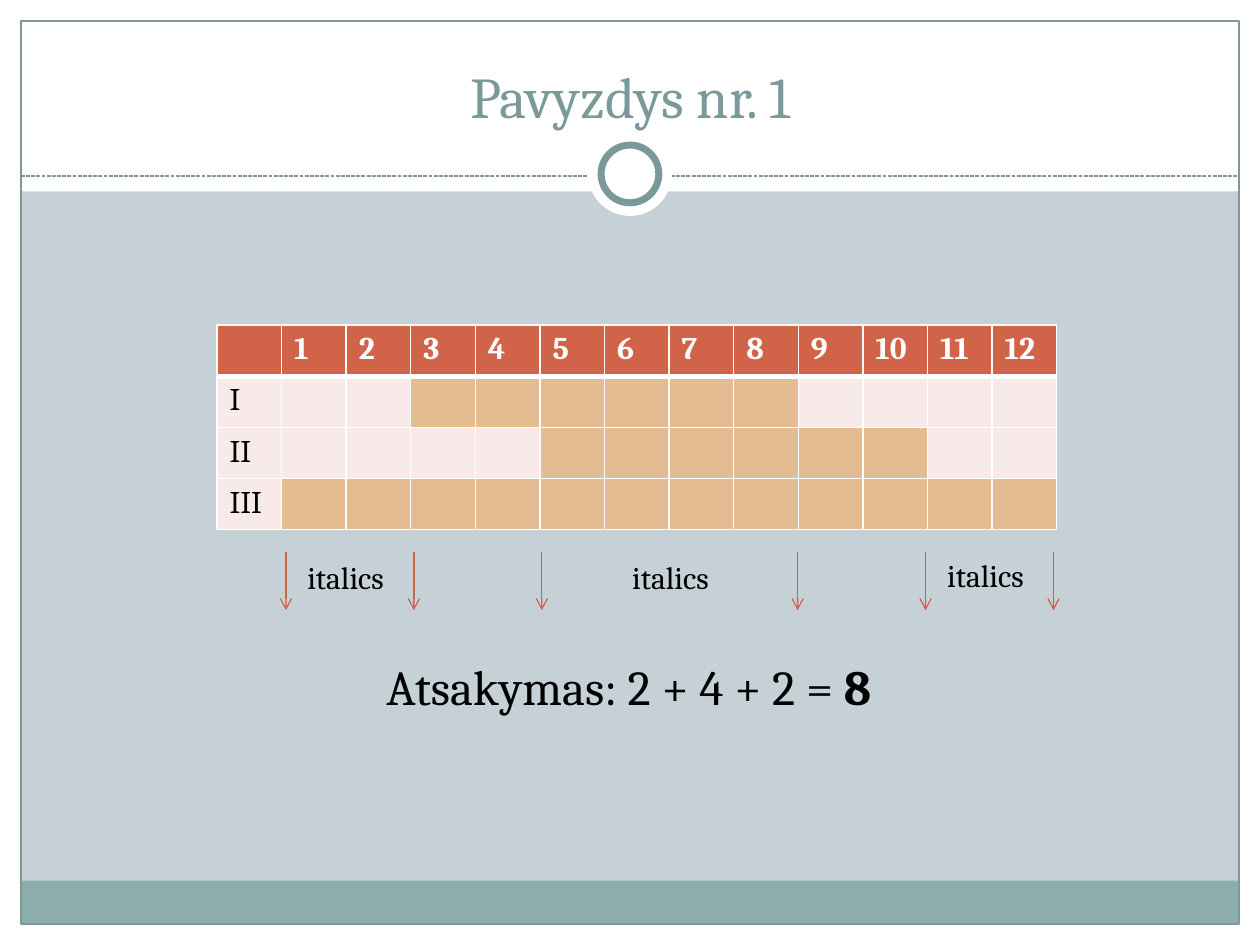
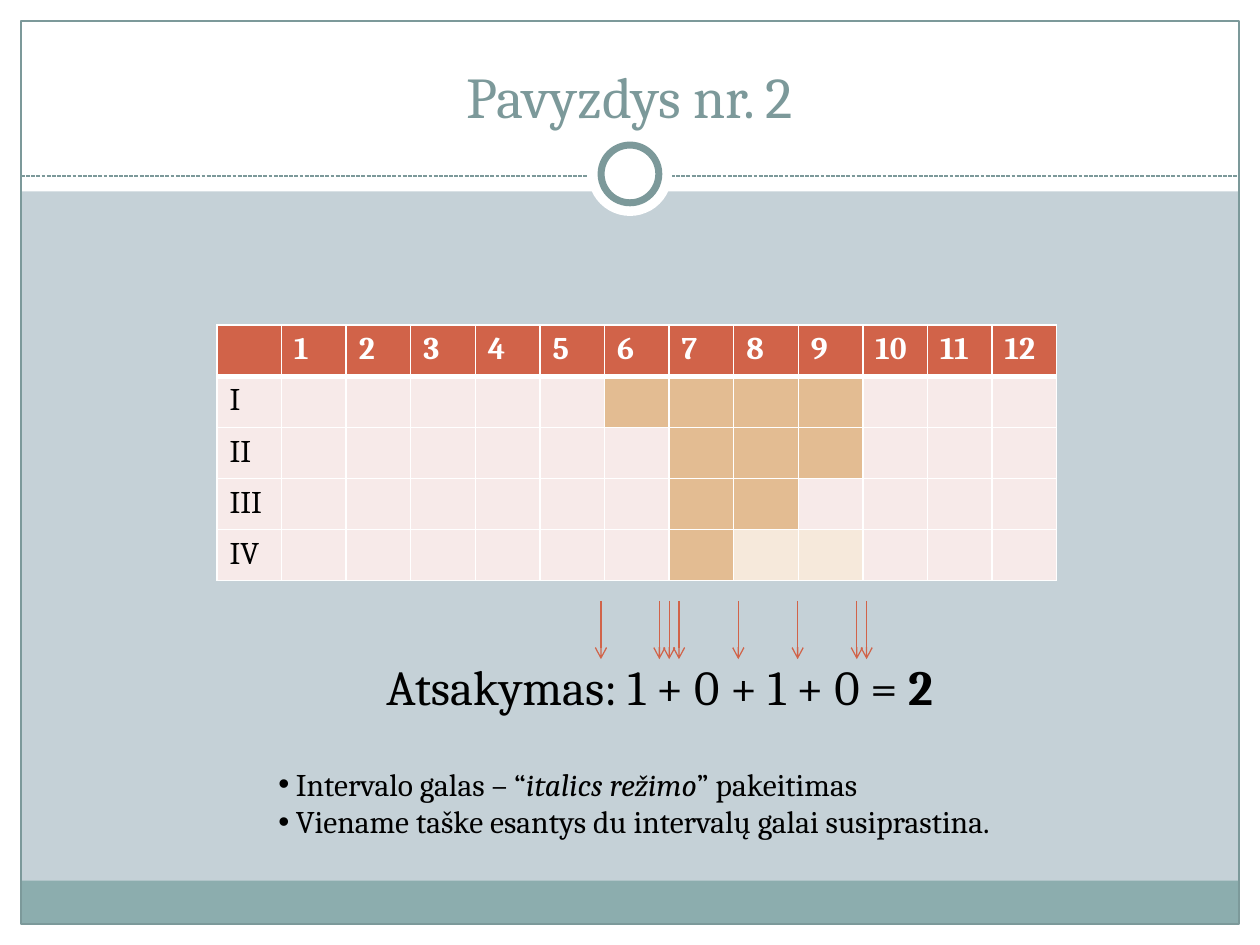
from dataclasses import dataclass

from lxml.etree import SubElement
from pptx import Presentation
from pptx.dml.color import RGBColor
from pptx.enum.dml import MSO_LINE_DASH_STYLE as Dash
from pptx.enum.shapes import MSO_CONNECTOR as Connector, MSO_SHAPE as Preset
from pptx.enum.text import MSO_ANCHOR as Anchor, MSO_AUTO_SIZE as AutoSize, PP_ALIGN as Align
from pptx.oxml.ns import qn
from pptx.util import Pt

# Content: bars are (first month, last month, colour name); text is a list of (words, style) runs
EXAMPLES = [
    {
        "title": "Pavyzdys nr. 1",
        "rows": [
            ("I", [(3, 8, "bar")]),
            ("II", [(5, 10, "bar")]),
            ("III", [(1, 12, "bar")]),
        ],
        "arrow_top": 315.4,
        "arrows": [163.4 + 36.55 * end for end in (0, 2, 4, 8, 10, 12)],
        "labels": [("italics", 168.5, 315.4), ("italics", 354.2, 315.4), ("italics", 534.2, 314.2)],
        "answer": [("Atsakymas: 2 + 4 + 2 = ", ""), ("8", "bold")],
        "notes": [],
    },
    {
        "title": "Pavyzdys nr. 2",
        "rows": [
            ("I", [(6, 9, "bar")]),
            ("II", [(7, 9, "bar")]),
            ("III", [(7, 8, "bar")]),
            ("IV", [(7, 7, "bar"), (8, 9, "pale_bar")]),
        ],
        "arrow_top": 343.4,
        "arrows": [343.4, 376.8, 382.4, 388, 421.9, 455.8, 489.6, 495.2],
        "labels": [],
        "answer": [("Atsakymas: 1 + 0 + 1 + 0 = ", ""), ("2", "bold")],
        "notes": [
            [("Intervalo galas – “", ""), ("italics režimo", "italic"), ("” pakeitimas", "")],
            [("Viename taške esantys du intervalų galai susiprastina.", "")],
        ],
    },
]
COLUMN_COUNT = 13


@dataclass(frozen=True)
class Theme:
    font: str = "Cambria"
    title_size: float = 33
    answer_size: float = 28
    body_size: float = 18
    background: str = "C5D1D7"
    white: str = "FFFFFF"
    black: str = "000000"
    band: str = "8CADAE"
    frame: str = "7C999A"
    accent: str = "D16349"
    cell: str = "F7EAE9"
    bar: str = "E3BC92"
    pale_bar: str = "F6E9DB"


THEME = Theme()
WIDTH, HEIGHT = 720, 540
MARGIN = 12
HEADER_HEIGHT = 109.4
TABLE_LEFT, TABLE_TOP, TABLE_WIDTH, ROW_HEIGHT = 124, 185.8, 480, 29.2
ARROW_LENGTH = 33.3


def rgb(colour):
    return RGBColor.from_string(colour)


def points(*lengths):
    return [Pt(length) for length in lengths]


# Basic parts
def add_shape(slide, preset, box, fill=None, line=None, line_width=0.75):
    shape = slide.shapes.add_shape(preset, *points(*box))
    shape.shadow.inherit = False
    if fill:
        shape.fill.solid()
        shape.fill.fore_color.rgb = rgb(fill)
    else:
        shape.fill.background()
    if line:
        shape.line.color.rgb = rgb(line)
        shape.line.width = Pt(line_width)
    else:
        shape.line.fill.background()


def add_line(slide, start, end, colour):
    connector = slide.shapes.add_connector(Connector.STRAIGHT, *points(*start, *end))
    connector.line.color.rgb = rgb(colour)
    connector.line.width = Pt(0.75)
    SubElement(connector._element.spPr, qn("a:effectLst"))
    return connector


def write(paragraph, runs, size, colour):
    for words, style in runs:
        run = paragraph.add_run()
        run.text = words
        font = run.font
        font.name, font.size, font.color.rgb = THEME.font, Pt(size), rgb(colour)
        font.bold, font.italic = style == "bold", style == "italic"


def add_text(slide, box, paragraphs, size, colour=THEME.black, wrap=True):
    text_frame = slide.shapes.add_textbox(*points(*box)).text_frame
    text_frame.word_wrap = wrap
    text_frame.auto_size = AutoSize.SHAPE_TO_FIT_TEXT
    for index, runs in enumerate(paragraphs):
        paragraph = text_frame.add_paragraph() if index else text_frame.paragraphs[0]
        write(paragraph, runs, size, colour)
    return text_frame


# Shared frame and title
def add_frame(slide, title):
    slide.background.fill.solid()
    slide.background.fill.fore_color.rgb = rgb(THEME.background)
    inner_width = WIDTH - 2 * MARGIN
    for box, colour in [
        ((0, HEIGHT - MARGIN, WIDTH, MARGIN), THEME.white),
        ((0, 0, WIDTH, HEADER_HEIGHT), THEME.white),
        ((0, 0, MARGIN, HEIGHT), THEME.white),
        ((WIDTH - MARGIN, 0, MARGIN, HEIGHT), THEME.white),
        ((MARGIN, 503.3, inner_width, 24.5), THEME.band),
    ]:
        add_shape(slide, Preset.RECTANGLE, box, colour)
    add_shape(slide, Preset.RECTANGLE, (MARGIN, MARGIN, inner_width, HEIGHT - 2 * MARGIN), line=THEME.frame)
    rule = add_line(slide, (MARGIN, 100.6), (WIDTH - MARGIN, 100.6), THEME.frame)
    rule.line.dash_style = Dash.SQUARE_DOT
    for diameter, outline in [(48, None), (33, THEME.frame)]:
        box = ((WIDTH - diameter) / 2, 99.4 - diameter / 2, diameter, diameter)
        add_shape(slide, Preset.OVAL, box, THEME.white, outline, 4)

    text_frame = add_text(slide, (24, 18, 672, 60), [[(title, "")]], THEME.title_size, THEME.frame)
    text_frame.auto_size = AutoSize.NONE
    text_frame.vertical_anchor = Anchor.BOTTOM
    text_frame.paragraphs[0].alignment = Align.CENTER


# Interval table
def set_borders(cell, top, bottom):
    properties = cell._tc.get_or_add_tcPr()
    for side, width in [("L", 1), ("R", 1), ("T", top), ("B", bottom)]:
        border = SubElement(properties, qn(f"a:ln{side}"), w=str(Pt(width)))
        fill = SubElement(border, qn("a:solidFill"))
        SubElement(fill, qn("a:srgbClr"), val=THEME.white)


def set_cell(cell, words, fill, colour, style="", top=1, bottom=1):
    set_borders(cell, top, bottom)
    cell.fill.solid()
    cell.fill.fore_color.rgb = rgb(fill)
    if words:
        write(cell.text_frame.paragraphs[0], [(words, style)], THEME.body_size, colour)


def add_interval_table(slide, rows):
    row_count = len(rows) + 1
    box = points(TABLE_LEFT, TABLE_TOP, TABLE_WIDTH, ROW_HEIGHT * row_count)
    table = slide.shapes.add_table(row_count, COLUMN_COUNT, *box).table
    for column in table.columns:
        column.width = Pt(TABLE_WIDTH / COLUMN_COUNT)
    for row in table.rows:
        row.height = Pt(ROW_HEIGHT)
    for month in range(COLUMN_COUNT):
        set_cell(table.cell(0, month), str(month or ""), THEME.accent, THEME.white, "bold", bottom=3)
    for row_index, (name, bars) in enumerate(rows, 1):
        fills = [THEME.cell] * COLUMN_COUNT
        for first, last, colour_name in bars:
            fills[first:last + 1] = [getattr(THEME, colour_name)] * (last - first + 1)
        for month, fill in enumerate(fills):
            words = "" if month else name
            top = 3 if row_index == 1 else 1
            set_cell(table.cell(row_index, month), words, fill, THEME.black, top=top)


# Arrows at the interval ends
def add_arrow(slide, x, top):
    arrow = add_line(slide, (x, top), (x, top + ARROW_LENGTH), THEME.accent)
    SubElement(arrow.line._get_or_add_ln(), qn("a:tailEnd"), type="arrow")


def add_notes(slide, notes):
    text_frame = add_text(slide, (152, 433.4, 489.6, 51), notes, THEME.body_size)
    for paragraph in text_frame.paragraphs:
        properties = paragraph._p.get_or_add_pPr()
        properties.set("marL", str(Pt(10)))
        properties.set("indent", str(Pt(-10)))
        SubElement(properties, qn("a:buFont"), typeface="Arial")
        SubElement(properties, qn("a:buChar"), char="•")


def build_slide(presentation, example):
    slide = presentation.slides.add_slide(presentation.slide_layouts[6])
    add_frame(slide, example["title"])
    add_interval_table(slide, example["rows"])
    for x in example["arrows"]:
        add_arrow(slide, x, example["arrow_top"])
    for words, left, top in example["labels"]:
        add_text(slide, (left, top, 62, 29), [[(words, "")]], THEME.body_size, wrap=False)
    if example["notes"]:
        add_notes(slide, example["notes"])
    add_text(slide, (213.8, 371.5, 388, 41), [example["answer"]], THEME.answer_size)


def main():
    presentation = Presentation()
    presentation.slide_width, presentation.slide_height = points(WIDTH, HEIGHT)
    for example in EXAMPLES:
        build_slide(presentation, example)
    presentation.save("out.pptx")


if __name__ == "__main__":
    main()
